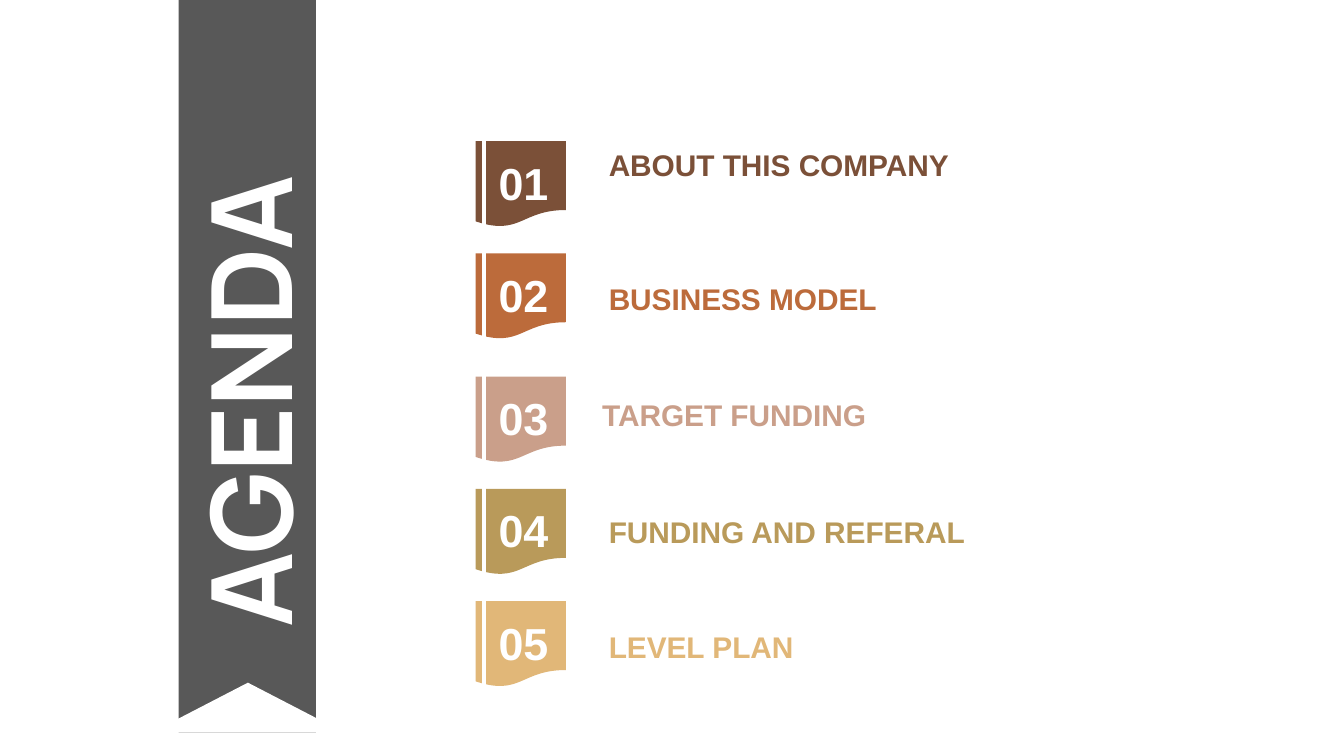
from pptx import Presentation
from pptx.dml.color import RGBColor
from pptx.enum.shapes import MSO_CONNECTOR, MSO_SHAPE
from pptx.enum.text import MSO_ANCHOR, MSO_AUTO_SIZE
from pptx.oxml.ns import qn
from pptx.util import Inches, Pt
from lxml.etree import SubElement

COLORS = {
    "white": "FFFFFF",
    "ribbon": "585858",
    "brown": "7B5038",
    "rust": "BC6B3B",
    "rose": "CA9F8A",
    "olive": "B99A5A",
    "sand": "E1B778",
}

deck = Presentation()
deck.slide_width = Inches(10)
deck.slide_height = deck.slide_width * 9 // 16
page = deck.slides.add_slide(deck.slide_layouts[6])

# Square grid: 100 columns across the slide, rows of the same size
UNIT = deck.slide_width / 100


def add_block(preset, color, *cells):
    """Add a filled shape without outline; cells are left, top, width, height."""
    shape = page.shapes.add_shape(preset, *[round(cell * UNIT) for cell in cells])
    shape.shadow.inherit = False
    shape.fill.solid()
    shape.fill.fore_color.rgb = RGBColor.from_string(COLORS[color])
    shape.line.fill.background()


def add_words(words, color, size, cells, font="Arial", inset=(0.1, 0.1)):
    """Add one bold line of text; inset is left and top."""
    box = page.shapes.add_textbox(*[round(cell * UNIT) for cell in cells])
    frame = box.text_frame
    frame.word_wrap = True
    frame.auto_size = MSO_AUTO_SIZE.NONE
    frame.vertical_anchor = MSO_ANCHOR.TOP
    frame.margin_left, frame.margin_top = [round(cell * UNIT) for cell in inset]
    frame.margin_right = frame.margin_bottom = 0
    span = frame.paragraphs[0].add_run()
    span.text = words
    span.font.name = font
    span.font.size = Pt(size)
    span.font.bold = True
    span.font.color.rgb = RGBColor.from_string(COLORS[color])
    return box


# Ribbon with a notched end and its vertical title
add_block(MSO_SHAPE.RECTANGLE, "ribbon", 13.3, 0, 10.2, 54.5)
add_block(MSO_SHAPE.ISOSCELES_TRIANGLE, "white", 11.3, 50.8, 14.3, 3.7)
title = add_words("AGENDA", "white", 60, (-3.4, 19.9, 43.6, 10.2), font="Manrope")
title.rotation = 270

# Agenda items: label, colour, then left, top, width and height of the label
items = [
    ("ABOUT THIS COMPANY", "brown", (45.2, 10.8, 32.4, 3.7)),
    ("BUSINESS MODEL", "rust", (45.2, 20.8, 46.4, 2.8)),
    ("TARGET FUNDING", "rose", (44.7, 29.4, 42.8, 2.8)),
    ("FUNDING AND REFERAL", "olive", (45.2, 38.1, 41.6, 2.8)),
    ("LEVEL PLAN", "sand", (45.2, 46.7, 41.6, 2.8)),
]
FLAG_TOP, FLAG_PITCH = 10.5, 8.35
GROUP_GAP = 0.83  # extra space between the second and third flag
STRIPE_X = 36

for index, (label, color, label_cells) in enumerate(items):
    top = FLAG_TOP + index * FLAG_PITCH + (GROUP_GAP if index >= 2 else 0)
    add_block(MSO_SHAPE.FLOWCHART_DOCUMENT, color, 35.4, top, 6.7, 6.4)
    add_words(f"{index + 1:02}", "white", 24, (35.7, top - 0.15, 5.6, 5.2),
              inset=(1.4, 1.2))
    add_words(label, color, 16, label_cells)

    stripe = page.shapes.add_connector(
        MSO_CONNECTOR.STRAIGHT,
        round(STRIPE_X * UNIT), round((top - 0.6) * UNIT),
        round(STRIPE_X * UNIT), round((top + 6.5) * UNIT))
    stripe.line.color.rgb = RGBColor.from_string(COLORS["white"])
    stripe.line.width = Pt(2.25)
    SubElement(stripe._element.spPr, qn("a:effectLst"))

deck.save("out.pptx")
